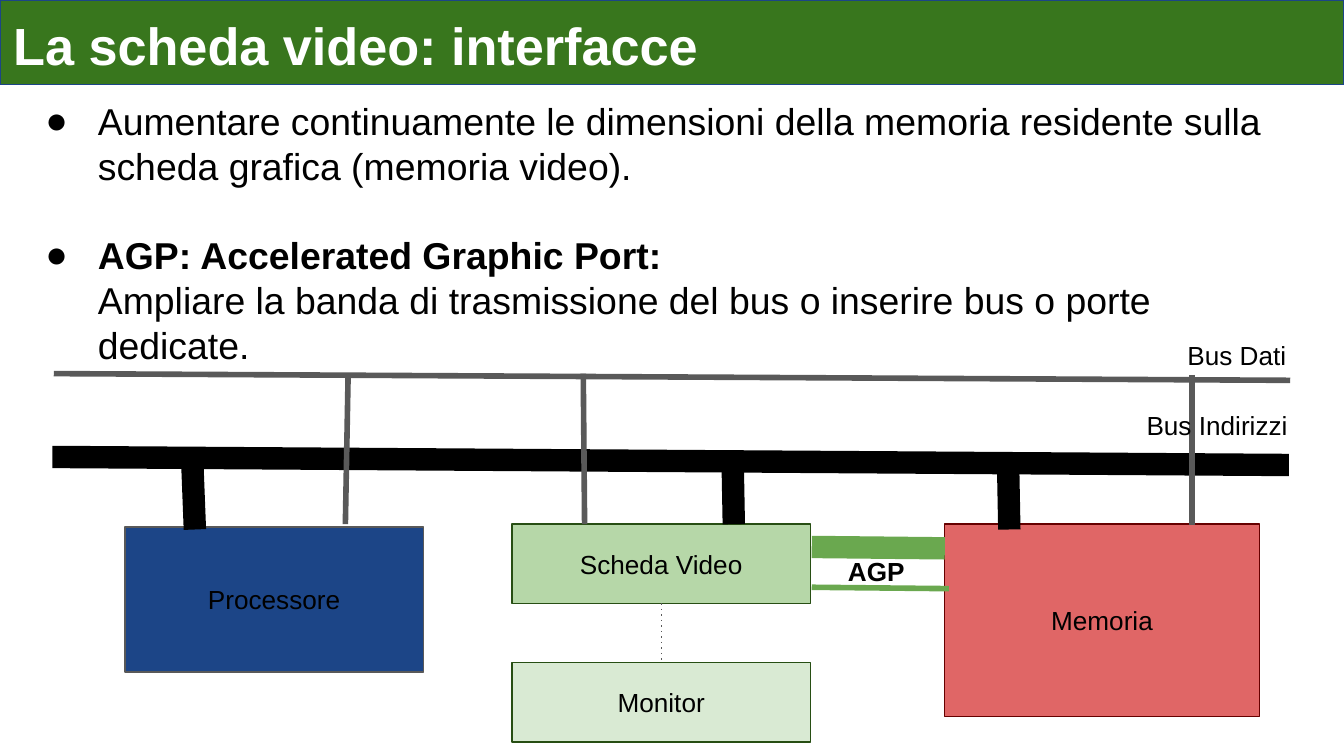
import pptx
import pptx.util
import pptx.dml.color
import pptx.enum.dml
import pptx.enum.shapes
import pptx.enum.text
import pptx.oxml.ns
import lxml.etree

Inches, Pt = pptx.util.Inches, pptx.util.Pt
RGBColor = pptx.dml.color.RGBColor
ALIGN, ANCHOR = pptx.enum.text.PP_ALIGN, pptx.enum.text.MSO_ANCHOR
qn = pptx.oxml.ns.qn

COLORS = {
    "black": "000000", "white": "FFFFFF", "gray": "595959",
    "title green": "38761D", "blue": "1C4587",
    "red": "E06666", "dark red": "660000",
    "green": "6AA84F", "dark green": "274E13",
    "light green": "B6D7A8", "pale green": "D9EAD3",
}


def color(name):
    return RGBColor.from_string(COLORS[name])


def write_text(shape, text, size=14, font_color="black", bold=False,
               align=ALIGN.CENTER, anchor=ANCHOR.MIDDLE):
    """Set one paragraph of text with equal margins on all sides."""
    frame = shape.text_frame
    frame.word_wrap = True
    frame.margin_left = frame.margin_right = Inches(0.1)
    frame.margin_top = frame.margin_bottom = Inches(0.1)
    frame.vertical_anchor = anchor
    frame.text = text
    paragraph = frame.paragraphs[0]
    paragraph.alignment = align
    font = paragraph.runs[0].font
    font.name, font.size, font.bold = "Arial", Pt(size), bold
    font.color.rgb = color(font_color)


presentation = pptx.Presentation()
presentation.slide_width = Inches(10)
presentation.slide_height = presentation.slide_width * 9 // 16
slide = presentation.slides.add_slide(presentation.slide_layouts[6])
shapes = slide.shapes

# Title bar and component boxes: text, left, top, width, height, fill, line
boxes = [
    ("La scheda video: interfacce", 0, 0, 10, 0.63, "title green", "blue"),
    ("Memoria", 7.03, 3.9, 2.34, 1.43, "red", "dark red"),
    ("Processore", 0.93, 3.92, 2.22, 1.08, "blue", "gray"),
    ("Scheda Video", 3.81, 3.9, 2.22, 0.59, "light green", "dark green"),
    ("Monitor", 3.81, 4.93, 2.22, 0.59, "pale green", "dark green"),
]
for text, left, top, width, height, fill, line in boxes:
    box = shapes.add_shape(pptx.enum.shapes.MSO_SHAPE.RECTANGLE,
                           Inches(left), Inches(top), Inches(width), Inches(height))
    box.shadow.inherit = False
    box.fill.solid()
    box.fill.fore_color.rgb = color(fill)
    box.line.color.rgb = color(line)
    box.line.width = Pt(0.75)
    if top == 0:
        write_text(box, text, 28, "white", True, ALIGN.LEFT, ANCHOR.TOP)
    else:
        write_text(box, text)

# Body text
body = shapes.add_textbox(Inches(0.13), Inches(0.63), Inches(9.45), Inches(1.86))
write_text(body, "Aumentare continuamente le dimensioni della memoria residente "
           "sulla scheda grafica (memoria video).",
           size=20, align=ALIGN.LEFT, anchor=ANCHOR.TOP)
agp_paragraph = body.text_frame.add_paragraph()
agp_paragraph.text = ("AGP: Accelerated Graphic Port:\v"
                      "Ampliare la banda di trasmissione del bus o inserire bus "
                      "o porte dedicate.")
agp_paragraph.space_before = Pt(24)
for paragraph in body.text_frame.paragraphs:
    properties = paragraph._p.get_or_add_pPr()
    properties.set("marL", str(Inches(0.5)))
    properties.set("indent", str(Inches(-0.39)))
    bullet_color = lxml.etree.SubElement(properties, qn("a:buClr"))
    lxml.etree.SubElement(bullet_color, qn("a:srgbClr"), val=COLORS["black"])
    lxml.etree.SubElement(properties, qn("a:buFont"), typeface="Arial")
    lxml.etree.SubElement(properties, qn("a:buChar"), char="●")
    paragraph.font.size = Pt(20)
    for run in paragraph.runs:
        run.font.name, run.font.size = "Arial", Pt(20)
        run.font.color.rgb = color("black")
agp_paragraph.runs[0].font.bold = True

# Buses, their branches and the AGP link: start x, y, end x, y, colour, width
lines = [
    (0.39, 3.4, 9.59, 3.46, "black", 12),
    (0.4, 2.78, 9.6, 2.83, "gray", 3),
    (1.43, 3.42, 1.45, 3.94, "black", 12),
    (2.59, 2.81, 2.57, 3.9, "gray", 3),
    (8.87, 2.79, 8.87, 3.91, "gray", 3),
    (4.92, 4.49, 4.92, 4.93, "gray", 0.75),
    (4.34, 2.78, 4.35, 3.9, "gray", 3),
    (5.45, 3.37, 5.46, 3.9, "black", 12),
    (7.5, 3.42, 7.51, 3.94, "black", 12),
    (6.04, 4.07, 7.03, 4.08, "green", 12),
    (6.04, 4.37, 7.06, 4.38, "green", 3),
]
for start_x, start_y, end_x, end_y, line_color, width in lines:
    connector = shapes.add_connector(pptx.enum.shapes.MSO_CONNECTOR.STRAIGHT,
                                     Inches(start_x), Inches(start_y),
                                     Inches(end_x), Inches(end_y))
    connector.line.color.rgb = color(line_color)
    connector.line.width = Pt(width)
    if width < 1:  # video card to monitor
        connector.line.dash_style = pptx.enum.dml.MSO_LINE.ROUND_DOT
        connector.line._ln.find(qn("a:prstDash")).set("val", "dot")
    lxml.etree.SubElement(connector._element.spPr, qn("a:effectLst"))

# Labels: text, left, top, width, alignment, bold
labels = [
    ("Bus Dati", 8.26, 2.42, 1.41, ALIGN.RIGHT, False),
    ("Bus Indirizzi", 8.16, 2.94, 1.52, ALIGN.RIGHT, False),
    ("AGP", 6.03, 4.03, 0.98, ALIGN.CENTER, True),
]
for text, left, top, width, align, bold in labels:
    label = shapes.add_textbox(Inches(left), Inches(top), Inches(width), Inches(0.44))
    write_text(label, text, bold=bold, align=align)

presentation.save("out.pptx")
